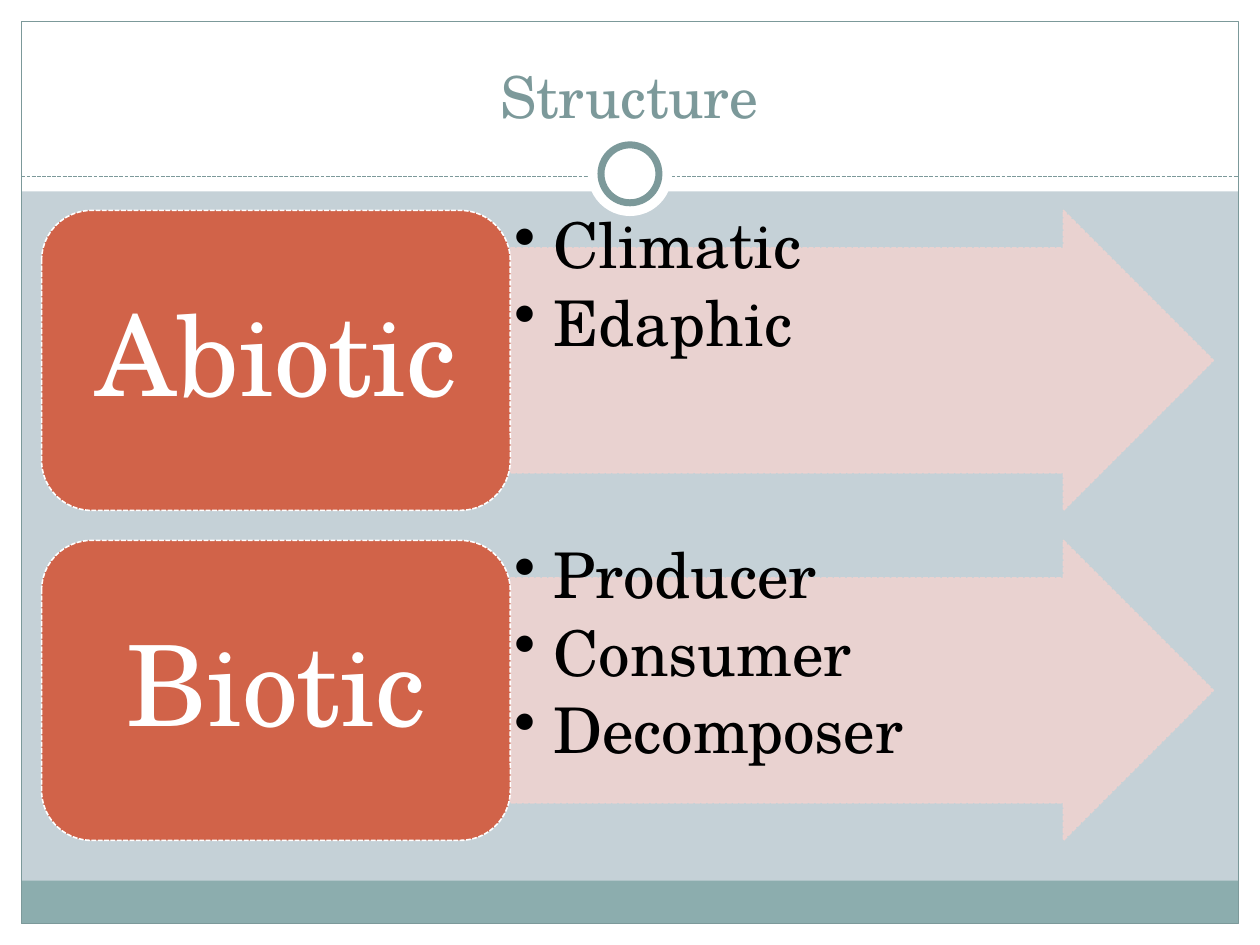
import pptx
import pptx.dml.color
import pptx.enum.dml
import pptx.enum.shapes
import pptx.enum.text
import pptx.oxml
import pptx.oxml.ns
import pptx.util
import lxml.etree

Inches = pptx.util.Inches
Pt = pptx.util.Pt
SHAPE = pptx.enum.shapes.MSO_SHAPE
ANCHOR = pptx.enum.text.MSO_ANCHOR
ALIGN = pptx.enum.text.PP_ALIGN
DASH = pptx.enum.dml.MSO_LINE.SQUARE_DOT
QNAME = pptx.oxml.ns.qn

WIDTH, HEIGHT = 10, 7.5
MARGIN = 0.17
FONT = "TeX Gyre Schola"
WHITE, SLATE, TEAL = "FFFFFF", "7C999A", "8CADAE"
BACKDROP, BRICK, BLUSH = "C5D1D7", "D16349", "EED3D0"
ROWS = [
    ("Abiotic", ["Climatic", "Edaphic"]),
    ("Biotic", ["Producer", "Consumer", "Decomposer"]),
]


def colour(code):
    return pptx.dml.color.RGBColor.from_string(code)


def set_all(target, values):
    for name, value in values.items():
        setattr(target, name, value)


def paint(fill, code, opacity=100):
    fill.solid()
    fill.fore_color.rgb = colour(code)
    if opacity < 100:
        for tint in fill._xPr.iter(QNAME("a:srgbClr")):
            alpha = lxml.etree.SubElement(tint, QNAME("a:alpha"))
            alpha.set("val", str(opacity * 1000))


def outline(line, code, width, dashed=False, opacity=100):
    paint(line.fill, code, opacity)
    line.width = Pt(width)
    if dashed:
        line.dash_style = DASH


def add_form(page, kind, box, fill=None, opacity=100):
    form = page.shapes.add_shape(kind, *map(Inches, box))
    form.shadow.inherit = False
    form.line.fill.background()
    if fill:
        paint(form.fill, fill, opacity)
    else:
        form.fill.background()
    return form


def write(frame, lines, size, code, frame_format, para_format):
    set_all(frame, {"word_wrap": True, **frame_format})
    for index, line in enumerate(lines):
        para = frame.paragraphs[0] if index == 0 else frame.add_paragraph()
        set_all(para, para_format)
        span = para.add_run()
        span.text = line
        set_all(span.font, {"size": Pt(size), "name": FONT})
        span.font.color.rgb = colour(code)


def margins(across, down):
    return {"margin_left": Inches(across), "margin_right": Inches(across),
            "margin_top": Inches(down), "margin_bottom": Inches(down)}


def add_bullet(para, indent):
    settings = para._p.get_or_add_pPr()
    settings.set("marL", str(Inches(indent)))
    settings.set("indent", str(-Inches(indent)))
    bullet = lxml.etree.SubElement(settings, QNAME("a:buChar"))
    bullet.set("char", "•")


def add_ring(page, centre_x, centre_y):
    for size, width in ((0.67, 0), (0.46, 4)):
        box = (centre_x - size / 2, centre_y - size / 2, size, size)
        disc = add_form(page, SHAPE.OVAL, box, WHITE)
        if width:
            outline(disc.line, SLATE, width)


def add_border(page, width, height):
    inner_width, inner_height = width - 2 * MARGIN, height - 2 * MARGIN
    bands = [
        ((0, height - MARGIN, width, MARGIN), WHITE),
        ((0, 0, width, 1.52), WHITE),
        ((0, 0, MARGIN, height), WHITE),
        ((width - MARGIN, 0, MARGIN, height), WHITE),
        ((MARGIN, 6.99, inner_width, 0.34), TEAL),
    ]
    for box, fill in bands:
        add_form(page, SHAPE.RECTANGLE, box, fill)
    border = add_form(page, SHAPE.RECTANGLE,
                      (MARGIN, MARGIN, inner_width, inner_height))
    outline(border.line, SLATE, 0.75)
    rule = page.shapes.add_connector(
        pptx.enum.shapes.MSO_CONNECTOR.STRAIGHT,
        *map(Inches, (MARGIN, 1.4, width - MARGIN, 1.4)))
    outline(rule.line, SLATE, 0.75, dashed=True)
    lxml.etree.SubElement(rule._element.spPr, QNAME("a:effectLst"))
    add_ring(page, width / 2, 1.38)


def place_title(page, text, box):
    title = page.shapes.title
    page.shapes._spTree.append(title._element)
    set_all(title, dict(zip(("left", "top", "width", "height"), map(Inches, box))))
    write(title.text_frame, [text], 33, SLATE,
          {"vertical_anchor": ANCHOR.BOTTOM, **margins(0.1, 0.05)},
          {"alignment": ALIGN.CENTER})


def add_row(page, label, items, box):
    left, top, width, height = box
    label_width = 0.4 * width
    arrow_box = (left + label_width, top, width - label_width, height)

    arrow = add_form(page, SHAPE.RIGHT_ARROW, arrow_box, BLUSH, 90)
    arrow.adjustments[0], arrow.adjustments[1] = 0.75, 0.5
    outline(arrow.line, BLUSH, 0.9, dashed=True, opacity=90)

    listing = page.shapes.add_textbox(*map(Inches, arrow_box)).text_frame
    write(listing, items, 36, "000000",
          {"vertical_anchor": ANCHOR.TOP, **margins(0.03, 0.03)},
          {"level": 1, "line_spacing": 0.9, "space_after": Pt(5.4)})
    for para in listing.paragraphs:
        add_bullet(para, 0.31)

    tile = add_form(page, SHAPE.ROUNDED_RECTANGLE,
                    (left, top, label_width, height), BRICK)
    outline(tile.line, WHITE, 0.9, dashed=True)
    write(tile.text_frame, [label], 64, WHITE,
          {"vertical_anchor": ANCHOR.MIDDLE, **margins(0.15, 0.02)},
          {"alignment": ALIGN.CENTER, "line_spacing": 0.9})


def add_diagram(page, rows, box):
    left, top, width, height = box
    gap_share = 0.1
    row_height = height / (len(rows) + gap_share * (len(rows) - 1))
    for index, (label, items) in enumerate(rows):
        row_top = top + index * row_height * (1 + gap_share)
        add_row(page, label, items, (left, row_top, width, row_height))


def main():
    deck = pptx.Presentation()
    set_all(deck, {"slide_width": Inches(WIDTH), "slide_height": Inches(HEIGHT)})
    page = deck.slides.add_slide(deck.slide_layouts[5])
    paint(page.background.fill, BACKDROP)
    add_border(page, WIDTH, HEIGHT)
    place_title(page, "Structure", (0.33, 0.25, 9.33, 0.83))
    add_diagram(page, ROWS, (0.33, 1.67, 9.3, 5))
    deck.save("out.pptx")


if __name__ == "__main__":
    main()
